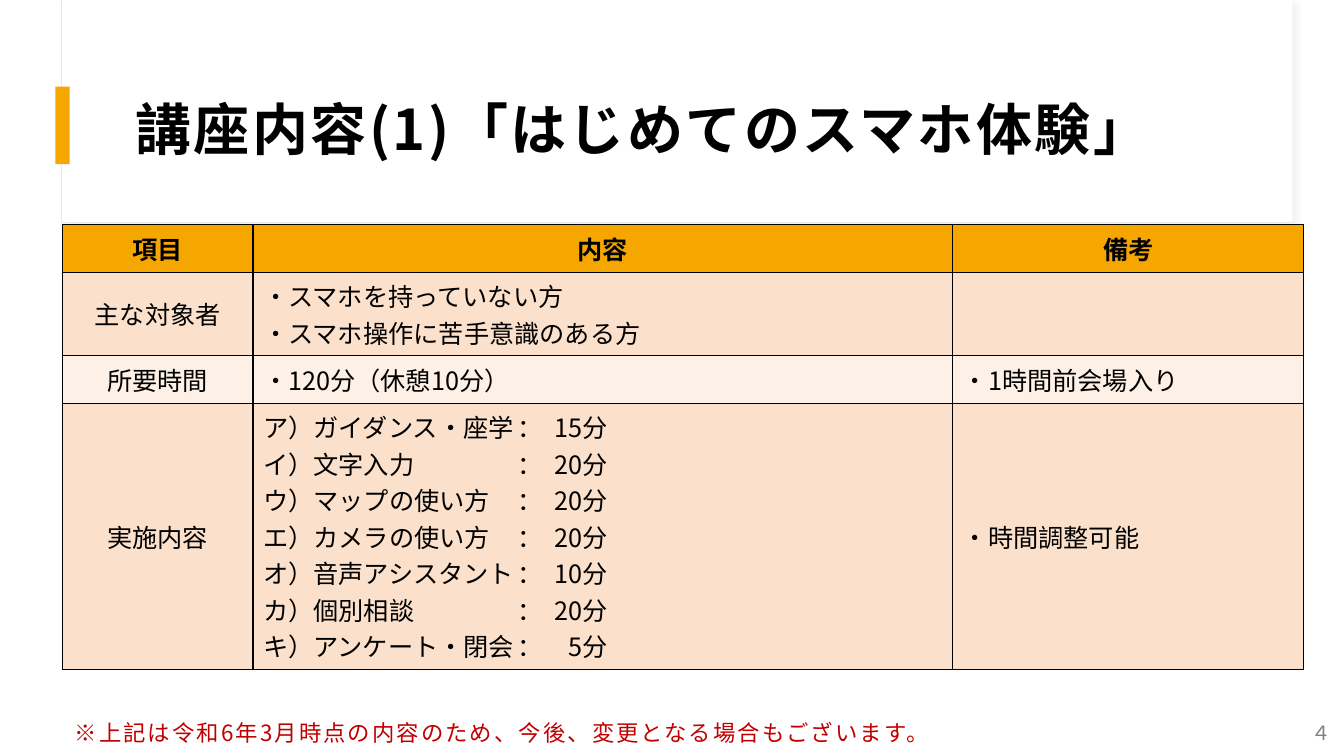
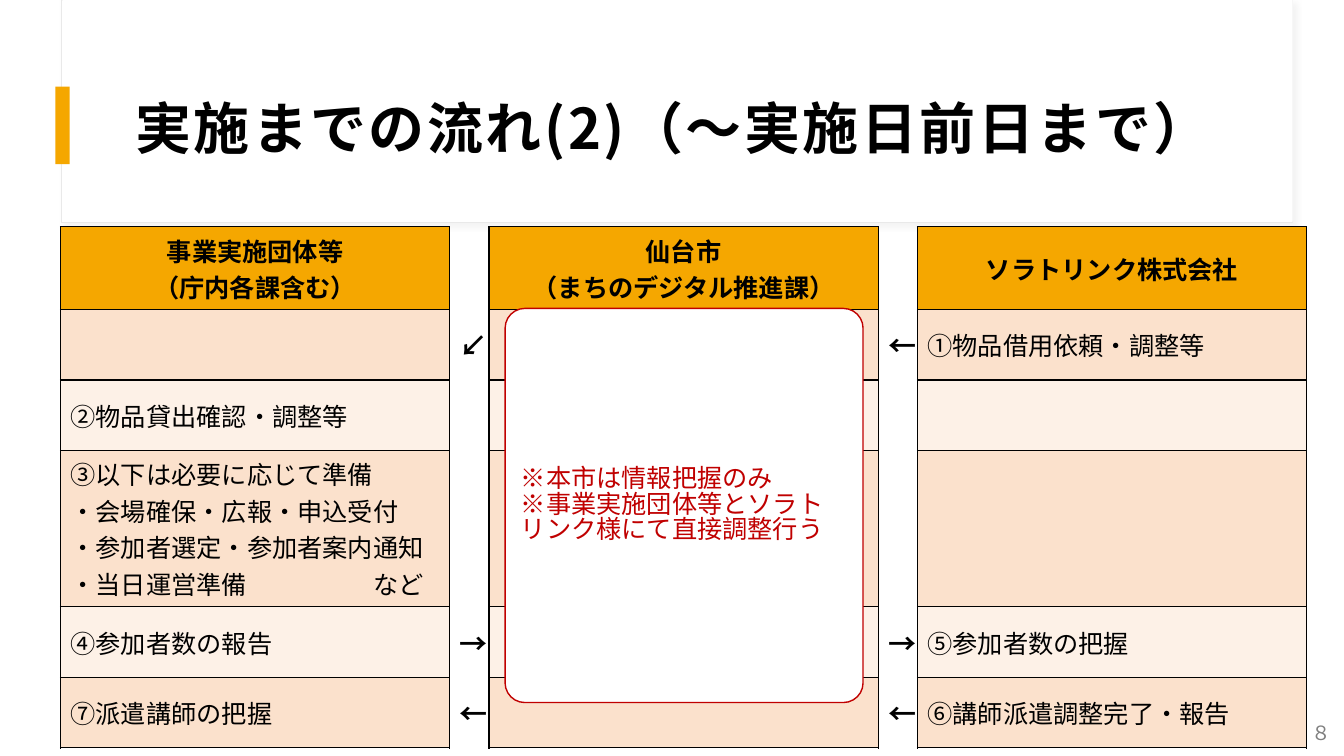
from dataclasses import dataclass

from lxml.etree import SubElement
from pptx import Presentation
from pptx.dml.color import RGBColor
from pptx.enum.shapes import MSO_SHAPE as Shape
from pptx.enum.text import MSO_ANCHOR as Anchor, PP_ALIGN as Align
from pptx.oxml.ns import qn
from pptx.util import Pt

SCALE = 9144  # EMU per px, 100 px to the inch


def px(length):
    return length * SCALE


@dataclass(frozen=True)
class Theme:
    font: str = "Noto Sans CJK JP"
    white: str = "FFFFFF"
    black: str = "000000"
    accent: str = "F5A700"
    bands: tuple = ("FBE1CC", "FDF1E7")
    warning: str = "C00000"
    muted: str = "808080"
    frame: str = "E9E9E9"
    shadow: str = "D9D9D9"
    title_size: int = 40
    arrow_size: int = 20
    body_size: int = 18
    note_size: int = 16
    number_size: int = 14


class Deck:
    """Holds the style and the slide being built."""

    def __init__(self, theme):
        self.theme = theme
        self.presentation = Presentation()
        self.presentation.slide_width = px(1333)
        self.presentation.slide_height = px(750)
        self.slide = None

    def new_slide(self, title, number, line_spacing=1.05, title_inset=12):
        """Start a slide with the shared frame, title and page number."""
        theme = self.theme
        self.slide = self.presentation.slides.add_slide(self.presentation.slide_layouts[6])
        frame = self.box(61, 0, 1221, 221, theme.white, theme.frame, 0.75)
        self.soft_shadow(frame)
        self.box(62, 0, 1220, 220, theme.white)
        self.box(55, 86, 14, 77, theme.accent)
        self.text(122, 60, 1112, 129, title, (12, title_inset, 12, 10), Anchor.MIDDLE,
                  size=theme.title_size, bold=True, spacing=1.8, line_spacing=line_spacing)
        self.text(1190, 713, 130, 28, number, (0, 0, 0, 0), Anchor.MIDDLE,
                  size=theme.number_size, color=theme.muted, align=Align.RIGHT)

    def box(self, left, top, width, height, fill, line=None, line_width=1,
            kind=Shape.RECTANGLE):
        shape = self.slide.shapes.add_shape(kind, px(left), px(top), px(width), px(height))
        shape.shadow.inherit = False
        shape.fill.solid()
        shape.fill.fore_color.rgb = RGBColor.from_string(fill)
        if line:
            shape.line.color.rgb = RGBColor.from_string(line)
            shape.line.width = Pt(line_width)
        else:
            shape.line.fill.background()
        return shape

    def soft_shadow(self, shape):
        effects = shape.element.spPr.find(qn("a:effectLst"))
        shadow = SubElement(effects, qn("a:outerShdw"), blurRad=str(Pt(4)),
                            dist=str(Pt(3)), dir="2700000", algn="tl", rotWithShape="0")
        color = SubElement(shadow, qn("a:srgbClr"), val=self.theme.shadow)
        SubElement(color, qn("a:alpha"), val="30000")

    def text(self, left, top, width, height, content, insets, anchor, **style):
        shape = self.slide.shapes.add_textbox(px(left), px(top), px(width), px(height))
        frame = shape.text_frame
        frame.word_wrap = True
        frame.vertical_anchor = anchor
        (frame.margin_left, frame.margin_top,
         frame.margin_right, frame.margin_bottom) = map(px, insets)
        self.fill_text(frame, content, **style)

    def callout(self, left, top, width, height, content):
        color = self.theme.warning
        shape = self.box(left, top, width, height, self.theme.white, color,
                         kind=Shape.ROUNDED_RECTANGLE)
        shape.adjustments[0] = 0.055
        frame = shape.text_frame
        frame.word_wrap = True
        frame.vertical_anchor = Anchor.MIDDLE
        self.fill_text(frame, content, color=color, line_spacing=0.84)

    def fill_text(self, frame, content, size=None, color=None, bold=False, align=Align.LEFT,
                  spacing=0, line_spacing=None, tabs=()):
        """Set one styled paragraph for each line of the content."""
        frame.text = content
        for paragraph in frame.paragraphs:
            paragraph.alignment = align
            if line_spacing:
                paragraph.line_spacing = line_spacing
            font = paragraph.font
            font.name = self.theme.font
            font.size = Pt(size or self.theme.body_size)
            font.bold = bold
            font.color.rgb = RGBColor.from_string(color or self.theme.black)
            properties = paragraph._p.get_or_add_pPr()
            defaults = properties.find(qn("a:defRPr"))
            SubElement(defaults, qn("a:ea"), typeface=self.theme.font)
            if spacing:
                defaults.set("spc", str(round(spacing * 100)))
            if "\t" in paragraph.text:
                stops = SubElement(properties, qn("a:tabLst"))
                for position, side in tabs:
                    SubElement(stops, qn("a:tab"), pos=str(px(position)), algn=side)
                defaults.addprevious(stops)

    def borders(self, cell, open_sides=()):
        properties = cell._tc.get_or_add_tcPr()
        for side in "LRTB":
            line = SubElement(properties, qn(f"a:ln{side}"), w=str(Pt(1)))
            if side in open_sides:
                SubElement(line, qn("a:noFill"))
            else:
                fill = SubElement(line, qn("a:solidFill"))
                SubElement(fill, qn("a:srgbClr"), val=self.theme.black)

    def table(self, left, top, widths, heights, rows, centered=(), arrows=(), tabs=()):
        """Draw a table; arrow columns have no fill and no rules across."""
        theme = self.theme
        table = self.slide.shapes.add_table(
            len(rows), len(widths), px(left), px(top), px(sum(widths)), px(sum(heights))).table
        table.first_row = table.horz_banding = False
        for column, width in zip(table.columns, widths):
            column.width = px(width)
        for row, height in zip(table.rows, heights):
            row.height = px(height)
        for i, contents in enumerate(rows):
            for j, content in enumerate(contents):
                cell = table.cell(i, j)
                cell.vertical_anchor = Anchor.MIDDLE
                is_header, is_arrow = i == 0, j in arrows
                self.borders(cell, "TB" if is_arrow else "")
                if is_arrow:
                    cell.fill.background()
                else:
                    cell.fill.solid()
                    fill = theme.accent if is_header else theme.bands[(i - 1) % 2]
                    cell.fill.fore_color.rgb = RGBColor.from_string(fill)
                if content:
                    middle = is_header or is_arrow or j in centered
                    self.fill_text(cell.text_frame, content,
                                   size=theme.arrow_size if is_arrow else theme.body_size,
                                   bold=is_header or is_arrow,
                                   align=Align.CENTER if middle else Align.LEFT, tabs=tabs)


def course_slide(deck):
    deck.new_slide("講座内容(1)「はじめてのスマホ体験」", "４")
    # Programme: label, colon and minutes are aligned by tab stops
    programme = [
        ("ア）ガイダンス・座学", 15), ("イ）文字入力", 20), ("ウ）マップの使い方", 20),
        ("エ）カメラの使い方", 20), ("オ）音声アシスタント", 10), ("カ）個別相談", 20),
        ("キ）アンケート・閉会", 5),
    ]
    rows = [
        ("項目", "内容", "備考"),
        ("主な対象者", "・スマホを持っていない方\n・スマホ操作に苦手意識のある方", ""),
        ("所要時間", "・120分（休憩10分）", "・1時間前会場入り"),
        ("実施内容", "\n".join(f"{label}\t：\t{minutes}分" for label, minutes in programme),
         "・時間調整可能"),
    ]
    deck.table(62, 223, (189, 694, 348), (47, 83, 47, 264), rows,
               centered=(0,), tabs=((252, "l"), (342, "r")))
    # Note under the table
    deck.text(62, 667, 1231, 83,
              "※上記は令和6年3月時点の内容のため、今後、変更となる場合もございます。",
              (12, 12, 12, 10), Anchor.BOTTOM, size=deck.theme.note_size,
              color=deck.theme.warning, spacing=1.5)


def flow_slide(deck):
    deck.new_slide("実施までの流れ(2)（～実施日前日まで）", "８",
                   line_spacing=0.84, title_inset=24)
    # Three parties with arrow columns between them
    preparation = "\n".join((
        "③以下は必要に応じて準備", "・会場確保・広報・申込受付",
        "・参加者選定・参加者案内通知", "・当日運営準備\tなど"))
    rows = [
        ("事業実施団体等\n（庁内各課含む）", "", "仙台市\n（まちのデジタル推進課）", "",
         "ソラトリンク株式会社"),
        ("", "↙", "", "←", "①物品借用依頼・調整等"),
        ("②物品貸出確認・調整等", "", "", "", ""),
        (preparation, "", "", "", ""),
        ("④参加者数の報告", "→", "", "→", "⑤参加者数の把握"),
        ("⑦派遣講師の把握", "←", "", "←", "⑥講師派遣調整完了・報告"),
    ]
    deck.table(60, 225, (386, 39, 386, 39, 386), (82, 70, 70, 155, 70, 70), rows,
               arrows=(1, 3), tabs=((350, "r"),))
    # Remark over the city's column
    deck.callout(501, 306, 355, 391,
                 "※本市は情報把握のみ\n※事業実施団体等とソラトリンク様にて直接調整行う")


def main():
    deck = Deck(Theme())
    course_slide(deck)
    flow_slide(deck)
    deck.presentation.save("out.pptx")


if __name__ == "__main__":
    main()
